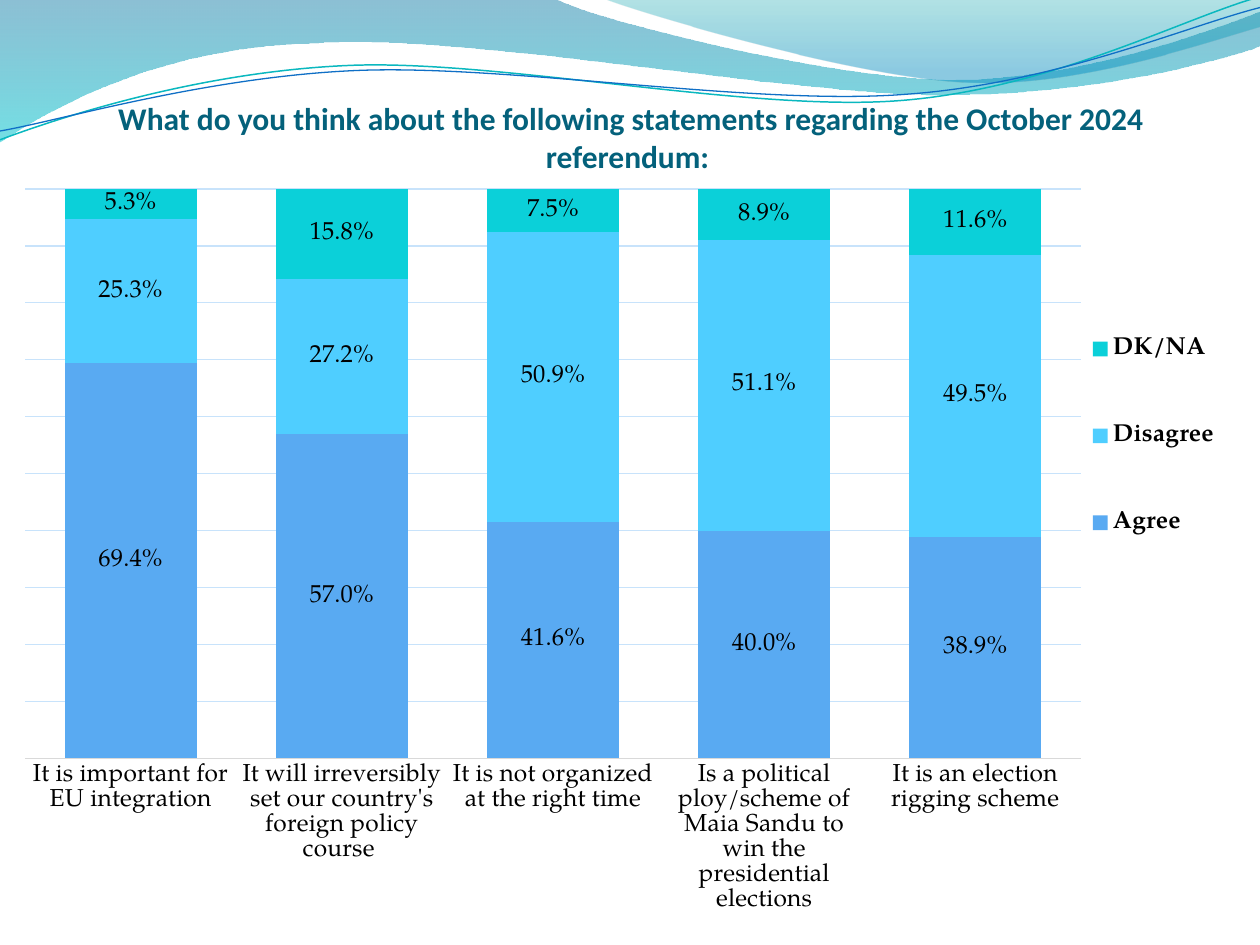
from lxml import etree
from pptx import Presentation
from pptx.chart.data import CategoryChartData
from pptx.dml.color import RGBColor
from pptx.enum.chart import XL_CHART_TYPE, XL_LEGEND_POSITION, XL_TICK_LABEL_POSITION, XL_TICK_MARK
from pptx.enum.text import MSO_ANCHOR, PP_ALIGN
from pptx.oxml import parse_xml
from pptx.oxml.ns import nsdecls, qn
from pptx.util import Inches, Pt

STACKED = XL_CHART_TYPE.COLUMN_STACKED
LEGEND_RIGHT = XL_LEGEND_POSITION.RIGHT
NEXT_TO_AXIS = XL_TICK_LABEL_POSITION.NEXT_TO_AXIS
NO_TICK = XL_TICK_MARK.NONE
BOTTOM, CENTER = MSO_ANCHOR.BOTTOM, PP_ALIGN.CENTER

BLACK = RGBColor(0x00, 0x00, 0x00)
TITLE_TEAL = RGBColor(0x04, 0x61, 0x7B)
AXIS_GRAY = RGBColor(0xD9, 0xD9, 0xD9)
GRID_BLUE = RGBColor(0xC8, 0xE3, 0xFB)
AGREE_BLUE = RGBColor(0x59, 0xAA, 0xF2)
DISAGREE_BLUE = RGBColor(0x4F, 0xCE, 0xFF)
UNSURE_TEAL = RGBColor(0x0B, 0xD0, 0xD9)
WAVE_TEAL = RGBColor(0x0A, 0xB8, 0xBF)
WAVE_BLUE = RGBColor(0x0F, 0x6F, 0xC6)
DEEP_BLUE = RGBColor(0x00, 0x74, 0xA1)
AQUA = RGBColor(0x00, 0xC6, 0xCF)
SEA_GREEN = RGBColor(0x00, 0xA1, 0xA9)
SKY_BLUE = RGBColor(0x00, 0x8B, 0xBF)

TITLE = "What do you think about the following statements regarding the October 2024 referendum: "
CHART_FONT = "TeX Gyre Pagella"
STATEMENTS = [
    "It is important for EU integration",
    "It will irreversibly set our country's foreign policy course ",
    "It is not organized at the right time",
    "Is a political ploy/scheme of Maia Sandu to win the presidential elections",
    "It is an election rigging scheme",
]
ANSWERS = [
    ("Agree ", AGREE_BLUE, (0.694, 0.57, 0.416, 0.4, 0.389)),
    ("Disagree ", DISAGREE_BLUE, (0.253, 0.272, 0.509, 0.511, 0.495)),
    ("DK/NA", UNSURE_TEAL, (0.053, 0.158, 0.075, 0.089, 0.116)),
]
# Inches: the chart on the slide, then its parts within the chart.
CHART_TOP, CHART_WIDTH, CHART_HEIGHT = 1.39, 10, 5.98
PLOT_AREA = (0.2, 0.11, 8.38, 4.52)
LEGEND_AREA = (8.55, 0.79, 1.26, 2.56)

# Outlines in inches: a pair is a straight step, a triple of pairs a Bezier curve.
# Gradient stops: position %, colour, opacity %.
BANDS = [
    ([(0, 0), (4.4, -0.01),
      ((4.76, 0.17), (6.64, 0.63), (7.58, 0.63)),
      ((8.53, 0.63), (9.58, 0.26), (10, 0.09)),
      (10.01, 0.36),
      ((9.83, 0.44), (8.7, 0.76), (7.46, 0.75)),
      ((6.22, 0.75), (3.82, 0.28), (2.57, 0.34)),
      ((1.29, 0.36), (0.46, 0.83), (-0.01, 1.13)),
      (0, 0)],
     [(0, DEEP_BLUE, 45), (100, AQUA, 55)]),
    ([(4.79, -0.01),
      ((5.09, 0.11), (6.82, 0.62), (7.69, 0.65)),
      ((8.56, 0.69), (9.61, 0.32), (10, 0.21)),
      (10, 0), (4.79, -0.01)],
     [(0, SEA_GREEN, 30), (80, SKY_BLUE, 45)]),
]
WAVES = [
    ([(0, 1.11),
      ((0.48, 0.93), (1.58, 0.57), (2.77, 0.52)),
      ((3.95, 0.47), (5.93, 0.89), (7.13, 0.8)),
      ((8.33, 0.71), (9.38, 0.15), (9.98, -0.02))], WAVE_TEAL, 0.85),
    ([(0, 1.04),
      ((0.47, 0.96), (1.64, 0.61), (2.83, 0.56)),
      ((4.03, 0.51), (5.97, 0.84), (7.17, 0.75)),
      ((8.36, 0.67), (9.41, 0.21), (10, 0.06))], WAVE_BLUE, 0.75),
]


def is_curve(step):
    return len(step) == 3


def add_outline(slide, outline, close):
    """Build a freeform through all points, then join each triple into one curve."""
    start, *steps = outline
    points = [point for step in steps for point in (step if is_curve(step) else (step,))]
    builder = slide.shapes.build_freeform(Inches(start[0]), Inches(start[1]))
    builder.add_line_segments([(Inches(x), Inches(y)) for x, y in points], close=close)
    shape = builder.convert_to_shape()
    shape.shadow.inherit = False
    segments = iter(list(shape._element.iter(qn("a:lnTo"))))
    for step in steps:
        segment = next(segments)
        if is_curve(step):
            curve = etree.Element(qn("a:cubicBezTo"))
            segment.addprevious(curve)
            for part in (segment, next(segments), next(segments)):
                curve.append(part[0])
                part.getparent().remove(part)
    return shape


def fill_downward(shape, stops):
    """Fill with a top-to-bottom gradient of translucent stops."""
    stop_xml = "".join(
        f'<a:gs pos="{pos * 1000}"><a:srgbClr val="{color}">'
        f'<a:alpha val="{opacity * 1000}"/></a:srgbClr></a:gs>'
        for pos, color, opacity in stops)
    gradient = parse_xml(f'<a:gradFill {nsdecls("a")}><a:gsLst>{stop_xml}</a:gsLst>'
                         '<a:lin ang="5400000" scaled="0"/></a:gradFill>')
    shape._element.spPr.find(qn("a:custGeom")).addnext(gradient)


def add_header_waves(slide):
    for outline, stops in BANDS:
        band = add_outline(slide, outline, close=True)
        fill_downward(band, stops)
        band.line.fill.background()
    for outline, color, width in WAVES:
        wave = add_outline(slide, outline, close=False)
        wave.fill.background()
        wave.line.color.rgb = color
        wave.line.width = Pt(width)


def apply(target, settings):
    for key, value in settings.items():
        setattr(target, key, value)


def style_font(font, name, size, color, bold=False):
    apply(font, {"name": name, "size": Pt(size), "bold": bold})
    font.color.rgb = color


def add_title(slide):
    frame = slide.shapes.add_textbox(Inches(0.51), Inches(0.76), Inches(9), Inches(0.63)).text_frame
    apply(frame, {"word_wrap": True, "vertical_anchor": BOTTOM, "margin_left": 0,
                  "margin_right": 0, "margin_top": Inches(0.05), "margin_bottom": 0})
    paragraph = frame.paragraphs[0]
    paragraph.text = TITLE
    paragraph.alignment = CENTER
    style_font(paragraph.runs[0].font, "Calibri", 18, TITLE_TEAL, bold=True)


def make_layout(area, **target):
    """Fixed place of a chart part, turned from inches into shares of the chart."""
    left, top, width, height = area
    layout = etree.Element(qn("c:layout"))
    manual = etree.SubElement(layout, qn("c:manualLayout"))
    settings = {**target, "xMode": "edge", "yMode": "edge",
                "x": left / CHART_WIDTH, "y": top / CHART_HEIGHT,
                "w": width / CHART_WIDTH, "h": height / CHART_HEIGHT}
    for tag, value in settings.items():
        etree.SubElement(manual, qn(f"c:{tag}")).set("val", str(value))
    return layout


def place_parts(chart):
    plot_area = chart._chartSpace.chart.plotArea
    legend = chart.legend._element
    for part in (plot_area, legend):
        for old in part.findall(qn("c:layout")):
            part.remove(old)
    plot_area.insert(0, make_layout(PLOT_AREA, layoutTarget="inner"))
    legend.find(qn("c:legendPos")).addnext(make_layout(LEGEND_AREA))


def add_answer_chart(slide):
    data = CategoryChartData(number_format="0.0%")
    data.categories = STATEMENTS
    for name, _, shares in ANSWERS:
        data.add_series(name, shares)
    chart = slide.shapes.add_chart(STACKED, 0, Inches(CHART_TOP), Inches(CHART_WIDTH),
                                   Inches(CHART_HEIGHT), data).chart
    chart.has_title = False
    style_font(chart.font, CHART_FONT, 14, BLACK)

    plot = chart.plots[0]
    apply(plot, {"gap_width": 60, "overlap": 100, "vary_by_categories": False})
    for series, (_, color, _) in zip(plot.series, ANSWERS):
        series.format.fill.solid()
        series.format.fill.fore_color.rgb = color
        labels = series.data_labels
        apply(labels, {"show_value": True, "number_format": "0.0%",
                       "number_format_is_linked": False})
        style_font(labels.font, CHART_FONT, 14, BLACK)

    shares, statements = chart.value_axis, chart.category_axis
    apply(shares, {"minimum_scale": 0, "maximum_scale": 1, "major_unit": 0.1,
                   "has_major_gridlines": True, "visible": False})
    apply(statements, {"major_tick_mark": NO_TICK, "tick_label_position": NEXT_TO_AXIS})
    style_font(statements.tick_labels.font, CHART_FONT, 14, BLACK)
    for line, color in ((shares.major_gridlines.format.line, GRID_BLUE),
                        (statements.format.line, AXIS_GRAY)):
        line.color.rgb = color
        line.width = Pt(0.75)

    chart.has_legend = True
    apply(chart.legend, {"position": LEGEND_RIGHT, "include_in_layout": False})
    style_font(chart.legend.font, CHART_FONT, 14, BLACK, bold=True)
    place_parts(chart)


def main():
    deck = Presentation()
    deck.slide_width, deck.slide_height = Inches(10), Inches(7.5)
    slide = deck.slides.add_slide(deck.slide_layouts[6])
    add_header_waves(slide)
    add_title(slide)
    add_answer_chart(slide)
    deck.save("out.pptx")


if __name__ == "__main__":
    main()
